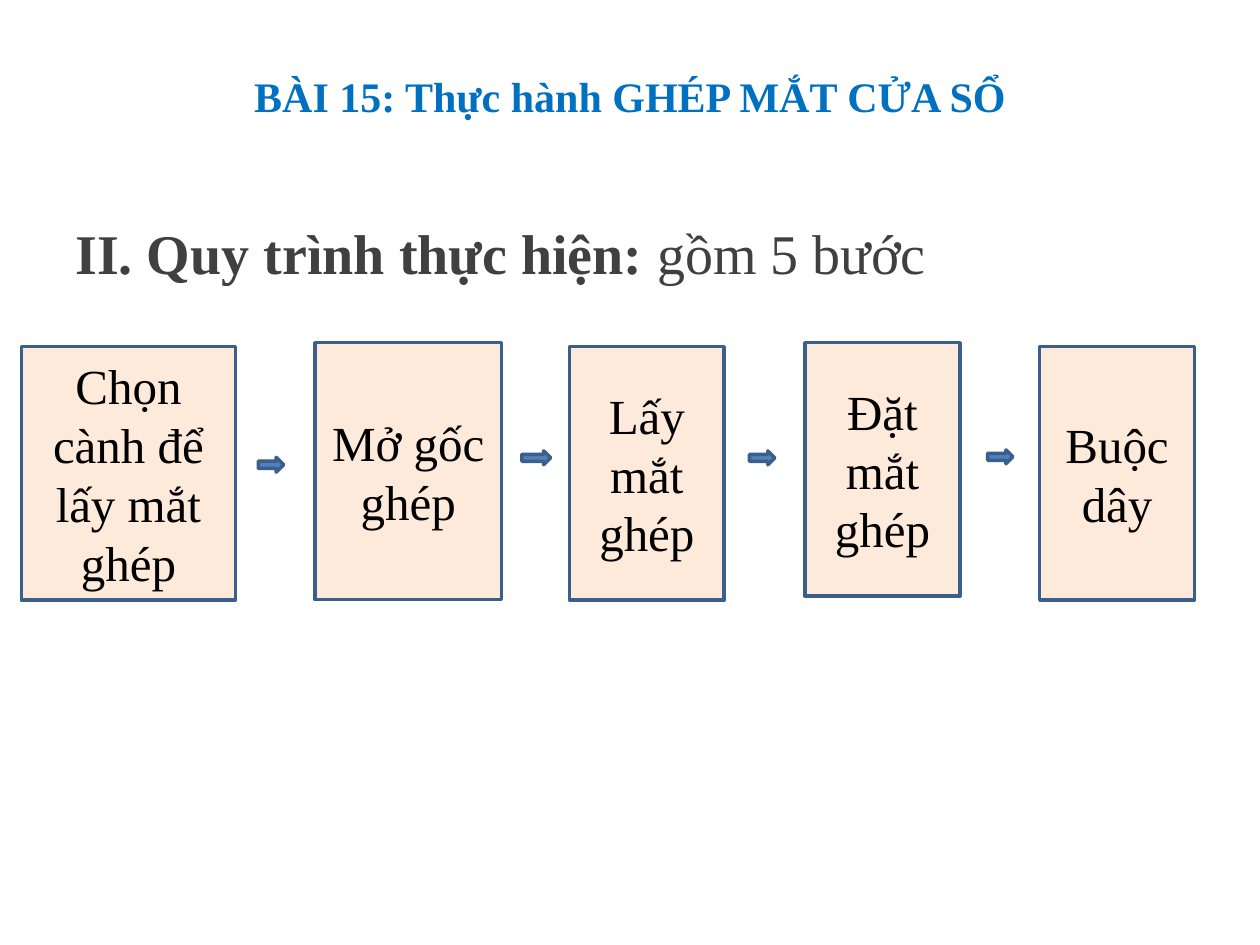
from typing import NamedTuple

from pptx import Presentation
from pptx.dml.color import RGBColor
from pptx.enum import shapes, text
from pptx.util import Cm, Pt

HUES = {"title": "0070C0", "head": "404040", "body": "000000",
        "box": "FDEADA", "arrow": "4F81BD", "edge": "3A5F8C"}
FONT = "Times New Roman"


class Area(NamedTuple):
    left: float
    top: float
    width: float
    height: float


class Step(NamedTuple):
    label: str
    area: Area


STEPS = [
    Step("Chọn cành để lấy mắt ghép", Area(0.43, 6.99, 4.32, 5.11)),
    Step("Mở gốc ghép", Area(6.35, 6.91, 3.76, 5.18)),
    Step("Lấy mắt ghép", Area(11.48, 6.99, 3.12, 5.11)),
    Step("Đặt mắt ghép", Area(16.23, 6.91, 3.12, 5.11)),
    Step("Buộc dây", Area(20.96, 6.99, 3.12, 5.11)),
]
ARROWS = [
    Area(5.21, 9.22, 0.51, 0.3),
    Area(10.52, 9.09, 0.58, 0.28),
    Area(15.11, 9.09, 0.51, 0.28),
    Area(19.91, 9.07, 0.51, 0.28),
]


def rgb(name: str) -> RGBColor:
    return RGBColor.from_string(HUES[name])


def write(shape, *parts: tuple[str, bool], size: float, hue: str,
          align=text.PP_ALIGN.CENTER, inset: float = 0.13) -> None:
    frame = shape.text_frame
    frame.word_wrap = True
    frame.vertical_anchor = text.MSO_ANCHOR.MIDDLE
    frame.margin_top = frame.margin_bottom = Cm(inset)
    para = frame.paragraphs[0]
    para.alignment = align
    for words, bold in parts:
        run = para.add_run()
        run.text = words
        run.font.name = FONT
        run.font.size = Pt(size)
        run.font.bold = bold
        run.font.color.rgb = rgb(hue)


def draw(slide, kind, area: Area, fill: str):
    shape = slide.shapes.add_shape(kind, *map(Cm, area))
    shape.shadow.inherit = False
    shape.fill.solid()
    shape.fill.fore_color.rgb = rgb(fill)
    shape.line.color.rgb = rgb("edge")
    shape.line.width = Pt(2)
    return shape


def main() -> None:
    """Build the slide on the five steps of grafting."""
    deck = Presentation()
    deck.slide_width, deck.slide_height = Cm(25.4), Cm(19.05)
    slide = deck.slides.add_slide(deck.slide_layouts[6])

    title = slide.shapes.add_textbox(*map(Cm, Area(1.27, 0.64, 22.86, 2.57)))
    write(title, ("BÀI 15: Thực hành GHÉP MẮT CỬA SỔ", True),
          size=24, hue="title", inset=0)
    head = slide.shapes.add_textbox(*map(Cm, Area(1.27, 3.18, 22.86, 3.81)))
    write(head, ("II. Quy trình thực hiện: ", True), ("gồm 5 bước", False),
          size=32, hue="head", align=text.PP_ALIGN.LEFT)

    kinds = shapes.MSO_SHAPE
    for step in STEPS:
        box = draw(slide, kinds.FLOWCHART_PROCESS, step.area, "box")
        write(box, (step.label, False), size=28, hue="body")
    for area in ARROWS:
        draw(slide, kinds.RIGHT_ARROW, area, "arrow")

    deck.save("out.pptx")


if __name__ == "__main__":
    main()
